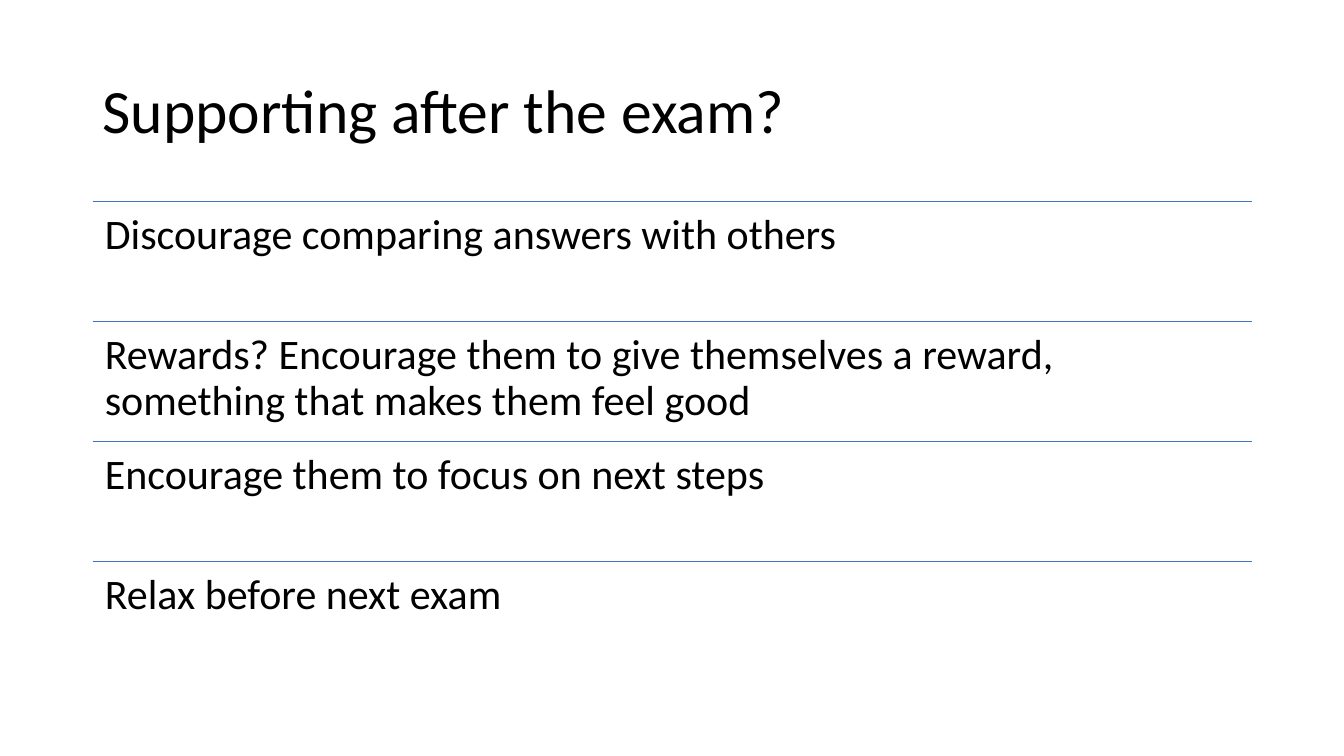
from pptx import Presentation
from pptx.dml.color import RGBColor
from pptx.enum.shapes import MSO_CONNECTOR
from pptx.enum.text import MSO_ANCHOR
from pptx.oxml.ns import qn
from pptx.util import Inches, Pt
from lxml.etree import SubElement

COLORS = {"text": "000000", "rule": "4472C4", "background": "FFFFFF"}
FONT = "Calibri"
TIPS = [
    "Discourage comparing answers with others",
    "Rewards? Encourage them to give themselves a reward, something that makes them feel good",
    "Encourage them to focus on next steps",
    "Relax before next exam",
]


def add_text(s, box, text, size, anchor, inset_x, inset_y):
    """Place one wrapped paragraph in the box (left, top, width, height in inches)."""
    tf = s.shapes.add_textbox(*map(Inches, box)).text_frame
    tf.word_wrap = True
    tf.vertical_anchor = anchor
    tf.margin_left = tf.margin_right = Inches(inset_x)
    tf.margin_top = tf.margin_bottom = Inches(inset_y)
    p = tf.paragraphs[0]
    p.text = text
    p.line_spacing = 0.9
    p.font.name = FONT
    p.font.size = Pt(size)
    p.font.color.rgb = RGBColor.from_string(COLORS["text"])


def add_rule(s, left, top, width):
    """Draw a thin horizontal rule."""
    line = s.shapes.add_connector(
        MSO_CONNECTOR.STRAIGHT,
        Inches(left), Inches(top), Inches(left + width), Inches(top),
    )
    line.line.color.rgb = RGBColor.from_string(COLORS["rule"])
    line.line.width = Pt(1)
    SubElement(line._element.spPr, qn("a:effectLst"))


def add_title(s, box, title):
    """Place the slide title, centred vertically in its box."""
    add_text(s, box, title, 44, MSO_ANCHOR.MIDDLE, 0.1, 0.05)


def add_tips(s, box, tips):
    """Stack the tips in equal rows, each under a rule."""
    left, top, width, height = box
    row_height = height / len(tips)
    for i, tip in enumerate(tips):
        y = top + i * row_height
        add_rule(s, left, y, width)
        add_text(s, (left, y, width, row_height), tip, 30, MSO_ANCHOR.TOP, 0.12, 0.12)


def main():
    """Build and save the slide."""
    prs = Presentation()
    prs.slide_width, prs.slide_height = Inches(13.33), Inches(7.5)
    s = prs.slides.add_slide(prs.slide_layouts[6])
    s.background.fill.solid()
    s.background.fill.fore_color.rgb = RGBColor.from_string(COLORS["background"])
    add_title(s, (0.92, 0.4, 11.5, 1.45), "Supporting after the exam?")
    add_tips(s, (0.92, 2, 11.5, 4.76), TIPS)
    prs.save("out.pptx")


if __name__ == "__main__":
    main()
